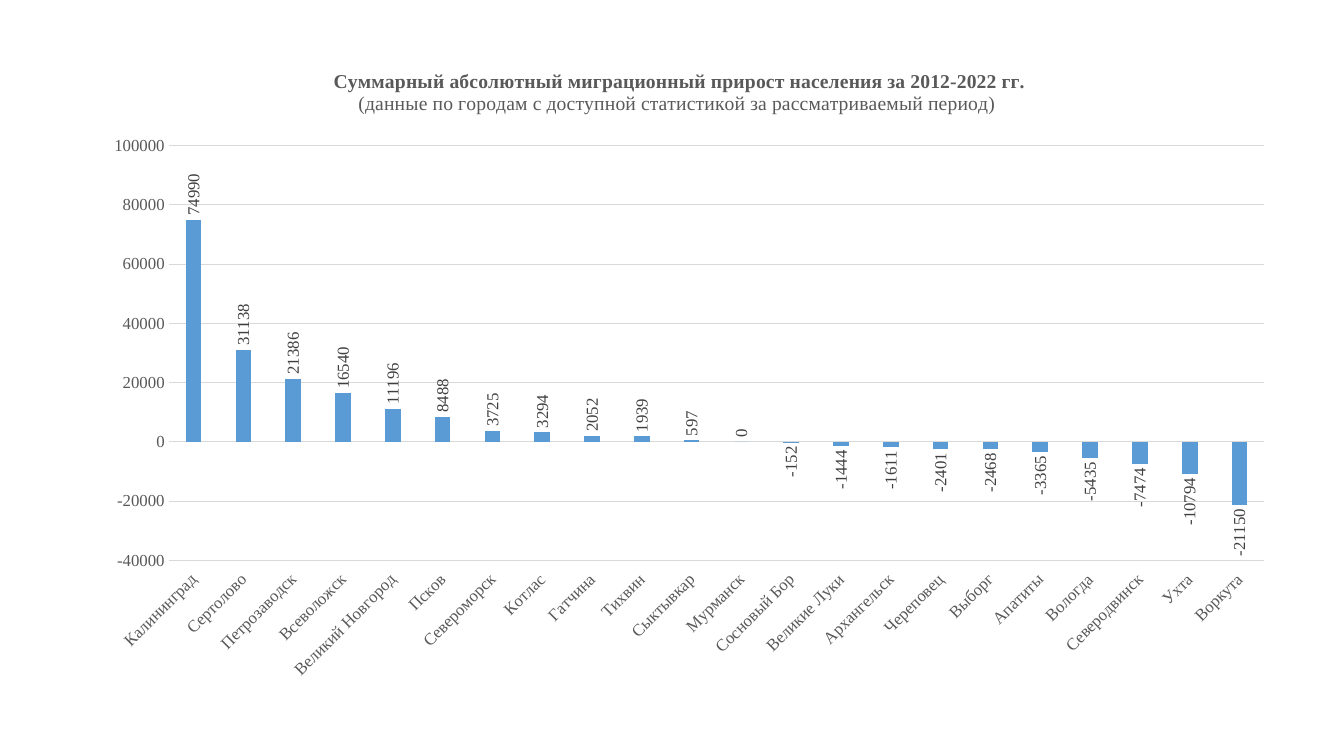
import pptx
import pptx.chart.data
import pptx.dml.color
import pptx.enum.chart
import pptx.oxml
import pptx.oxml.ns
import pptx.util
from dataclasses import dataclass

WIDE, HIGH = pptx.util.Inches(13.33), pptx.util.Inches(7.5)


@dataclass(frozen=True)
class Theme:
    face: str = "Times New Roman"
    bar: str = "5B9BD5"
    grid: str = "D9D9D9"
    text: str = "595959"
    label: str = "404040"
    head: int = 14
    body: int = 12


THEME = Theme()

TITLE = [
    ("Суммарный абсолютный миграционный прирост населения за 2012-2022 гг.", True),
    ("(данные по городам с доступной статистикой за рассматриваемый период) ", False),
]

GROWTH = {
    "Калининград": 74990,
    "Сертолово": 31138,
    "Петрозаводск": 21386,
    "Всеволожск": 16540,
    "Великий Новгород": 11196,
    "Псков": 8488,
    "Североморск": 3725,
    "Котлас": 3294,
    "Гатчина": 2052,
    "Тихвин": 1939,
    "Сыктывкар": 597,
    "Мурманск": 0,
    "Сосновый Бор": -152,
    "Великие Луки": -1444,
    "Архангельск": -1611,
    "Череповец": -2401,
    "Выборг": -2468,
    "Апатиты": -3365,
    "Вологда": -5435,
    "Северодвинск": -7474,
    "Ухта": -10794,
    "Воркута": -21150,
}


def style(font, color, size=THEME.body, bold=False):
    font.name = THEME.face
    font.size = pptx.util.Pt(size)
    font.bold = bold
    font.color.rgb = pptx.dml.color.RGBColor.from_string(color)


def rule(line):
    line.color.rgb = pptx.dml.color.RGBColor.from_string(THEME.grid)
    line.width = pptx.util.Pt(0.75)


def turn(owner, angle):
    """Rotate the text of an axis or of data labels, in degrees."""
    body = owner._element.find(".//" + pptx.oxml.ns.qn("a:bodyPr"))
    body.set("rot", str(angle * 60000))
    body.set("vert", "horz")


def place(part, index, **spots):
    """Give a chart part a manual layout, in shares of the chart's size."""
    for old in part.findall(pptx.oxml.ns.qn("c:layout")):
        part.remove(old)
    inner = '<c:layoutTarget val="inner"/>' if "w" in spots else ""
    modes = "".join(f'<c:{key}Mode val="edge"/>' for key in "xy")
    sizes = "".join(f'<c:{key} val="{val}"/>' for key, val in spots.items())
    part.insert(index, pptx.oxml.parse_xml(
        f'<c:layout {pptx.oxml.ns.nsdecls("c")}><c:manualLayout>'
        f"{inner}{modes}{sizes}</c:manualLayout></c:layout>"))


def add_title(chart):
    title = chart.chart_title
    frame = title.text_frame
    for row, (words, bold) in enumerate(TITLE):
        para = frame.add_paragraph() if row else frame.paragraphs[0]
        run = para.add_run()
        run.text = words
        style(run.font, THEME.text, THEME.head, bold)
    title.include_in_layout = False
    place(title._element, 1, x=0.217, y=0.034)


def set_axes(chart):
    towns, scale = chart.category_axis, chart.value_axis
    for axis in (towns, scale):
        axis.major_tick_mark = pptx.enum.chart.XL_TICK_MARK.NONE
        axis.minor_tick_mark = pptx.enum.chart.XL_TICK_MARK.NONE
        style(axis.tick_labels.font, THEME.text)
    towns.tick_label_position = pptx.enum.chart.XL_TICK_LABEL_POSITION.LOW
    rule(towns.format.line)
    turn(towns, -45)
    scale.minimum_scale, scale.maximum_scale = -40000, 100000
    scale.major_unit = 20000
    scale.format.line.fill.background()
    scale.has_major_gridlines = True
    rule(scale.major_gridlines.format.line)


def set_bars(chart):
    plot = chart.plots[0]
    plot.gap_width, plot.overlap = 219, -27
    plot.vary_by_categories = False
    bars = plot.series[0]
    bars.invert_if_negative = False
    bars.format.fill.solid()
    bars.format.fill.fore_color.rgb = pptx.dml.color.RGBColor.from_string(THEME.bar)
    labels = bars.data_labels
    labels.show_value = True
    labels.position = pptx.enum.chart.XL_LABEL_POSITION.OUTSIDE_END
    style(labels.font, THEME.label)
    turn(labels, -90)


def add_chart(slide, left, top, width, height):
    data = pptx.chart.data.CategoryChartData()
    data.categories = list(GROWTH)
    data.add_series("Series 1", list(GROWTH.values()))
    chart = slide.shapes.add_chart(
        pptx.enum.chart.XL_CHART_TYPE.COLUMN_CLUSTERED,
        int(WIDE * left), int(HIGH * top), int(WIDE * width), int(HIGH * height),
        data).chart
    chart.has_legend = False
    style(chart.font, "000000")
    add_title(chart)
    set_axes(chart)
    set_bars(chart)
    area = chart._chartSpace.find(".//" + pptx.oxml.ns.qn("c:plotArea"))
    place(area, 0, x=0.085, y=0.154, w=0.894, h=0.618)


def main():
    deck = pptx.Presentation()
    deck.slide_width, deck.slide_height = WIDE, HIGH
    slide = deck.slides.add_slide(deck.slide_layouts[6])
    add_chart(slide, left=0.048, top=0.056, width=0.912, height=0.888)
    deck.save("out.pptx")


if __name__ == "__main__":
    main()
